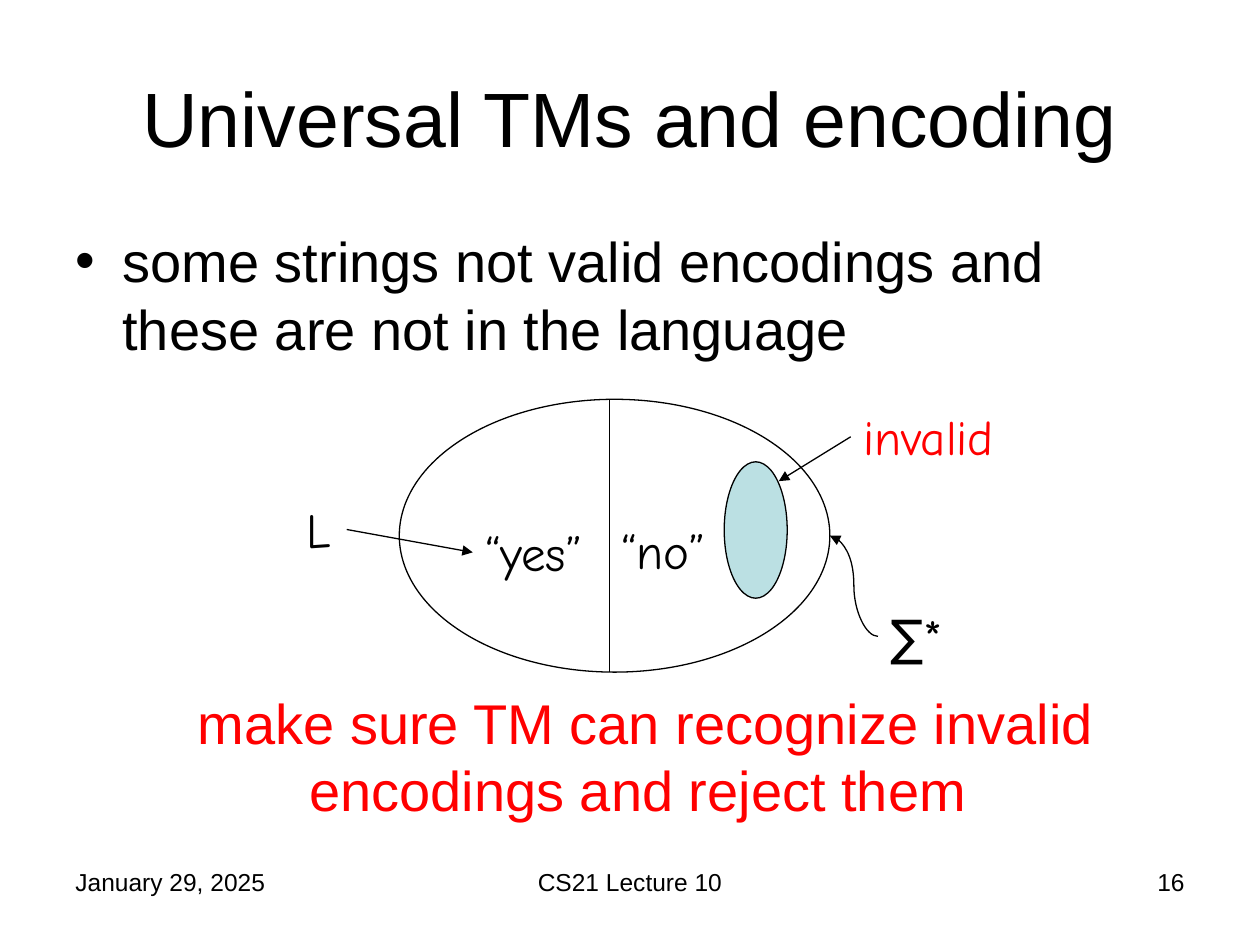
from dataclasses import dataclass

from lxml.etree import SubElement
from pptx import Presentation
from pptx.dml.color import RGBColor
from pptx.enum.shapes import MSO_CONNECTOR as Link, MSO_SHAPE as Shape
from pptx.enum.text import MSO_ANCHOR as Anchor, MSO_AUTO_SIZE as Fit, PP_ALIGN as Align
from pptx.oxml.ns import qn
from pptx.util import Cm, Pt


@dataclass(frozen=True)
class Theme:
    ink: RGBColor = RGBColor(0, 0, 0)
    alert: RGBColor = RGBColor(255, 0, 0)
    region: RGBColor = RGBColor(0xBB, 0xE0, 0xE3)
    text_font: str = "Arial"
    label_font: str = "Comic Neue"
    title_size: Pt = Pt(44)
    body_size: Pt = Pt(32)
    label_size: Pt = Pt(28)
    footer_size: Pt = Pt(14)
    line_width: Pt = Pt(0.75)


THEME = Theme()
LEFT, RIGHT = 0, 25.4
MARGIN = 1.27
CONTENT_WIDTH = RIGHT - 2 * MARGIN
LABEL_HEIGHT = 1.45


def add_text(slide, text, left, top, width, height, size, color=THEME.ink,
             font=THEME.text_font, align=Align.LEFT, anchor=Anchor.TOP):
    box = slide.shapes.add_textbox(Cm(left), Cm(top), Cm(width), Cm(height))
    frame = box.text_frame
    frame.text = text
    frame.word_wrap = True
    frame.vertical_anchor = anchor
    paragraph = frame.paragraphs[0]
    paragraph.alignment = align
    face = paragraph.runs[0].font
    face.name, face.size = font, size
    face.color.rgb = color
    return box


def add_label(slide, text, left, top, width, color=THEME.ink, wrap=True):
    label = add_text(slide, text, left, top, width, LABEL_HEIGHT,
                     THEME.label_size, color, THEME.label_font)
    label.text_frame.word_wrap = wrap
    label.text_frame.auto_size = Fit.SHAPE_TO_FIT_TEXT
    return label


def add_bullet(box, indent):
    properties = box.text_frame.paragraphs[0]._p.get_or_add_pPr()
    properties.set("marL", str(indent))
    properties.set("indent", str(-indent))
    SubElement(properties, qn("a:buFont"), typeface=THEME.text_font)
    SubElement(properties, qn("a:buChar"), char="•")


def add_set(slide, left, top, width, height, color=None):
    oval = slide.shapes.add_shape(Shape.OVAL, Cm(left), Cm(top), Cm(width), Cm(height))
    oval.shadow.inherit = False
    if color is None:
        oval.fill.background()
    else:
        oval.fill.solid()
        oval.fill.fore_color.rgb = color
    oval.line.color.rgb = THEME.ink
    oval.line.width = THEME.line_width


def add_line(slide, start, end, kind=Link.STRAIGHT, arrow=True):
    line = slide.shapes.add_connector(kind, *(Cm(value) for value in start + end))
    line.line.color.rgb = THEME.ink
    line.line.width = THEME.line_width
    if arrow:
        SubElement(line.line._get_or_add_ln(), qn("a:tailEnd"), type="triangle")
    SubElement(line._element.spPr, qn("a:effectLst"))
    return line


def add_footer(slide, date, course, number):
    top, height = 17.35, 1.32
    side, middle = 5.92, 8.05
    parts = (
        (date, MARGIN, side, Align.LEFT),
        (course, (RIGHT - middle) / 2, middle, Align.CENTER),
        (number, RIGHT - MARGIN - side, side, Align.RIGHT),
    )
    for text, left, width, align in parts:
        add_text(slide, text, left, top, width, height, THEME.footer_size, align=align)


def add_language_diagram(slide):
    add_set(slide, 8.05, 8.05, 8.68, 5.5)
    add_line(slide, (12.28, 8.05), (12.28, 13.55), arrow=False)
    add_set(slide, 14.6, 9.31, 1.27, 2.75, THEME.region)

    yes = add_label(slide, "“yes”", 9.53, 10.41, 3.81)
    add_label(slide, "“no”", 12.28, 10.36, 2.31, wrap=False)
    language = add_label(slide, "L", 5.93, 9.95, 1.06)
    invalid = add_label(slide, "invalid", 17.15, 8.08, 4.02, THEME.alert)
    add_label(slide, "∑*", 17.7, 12.11, 1.78, wrap=False)

    membership = add_line(slide, (6.99, 10.67), (9.53, 11.13))
    membership.begin_connect(language, 3)
    membership.end_connect(yes, 1)
    rejection = add_line(slide, (17.15, 8.8), (15.7, 9.7))
    rejection.begin_connect(invalid, 1)
    add_line(slide, (17.7, 12.83), (16.73, 10.8), Link.CURVE)


def main():
    deck = Presentation()
    deck.slide_width, deck.slide_height = Cm(RIGHT), Cm(19.05)
    slide = deck.slides.add_slide(deck.slide_layouts[6])

    add_text(slide, "Universal TMs and encoding", MARGIN, 0.76, CONTENT_WIDTH, 3.18,
             THEME.title_size, align=Align.CENTER, anchor=Anchor.MIDDLE)
    claim = add_text(slide, "some strings not valid encodings and these are not in the language",
                     MARGIN, 4.45, CONTENT_WIDTH, 3.18, THEME.body_size)
    add_bullet(claim, Cm(0.95))
    add_language_diagram(slide)
    add_text(slide, "make sure TM can recognize invalid encodings and reject them ",
             2.54, 13.76, 20.96, 2.97, THEME.body_size, THEME.alert, align=Align.CENTER)
    add_footer(slide, "January 29, 2025", "CS21 Lecture 10", "16")

    deck.save("out.pptx")


if __name__ == "__main__":
    main()
